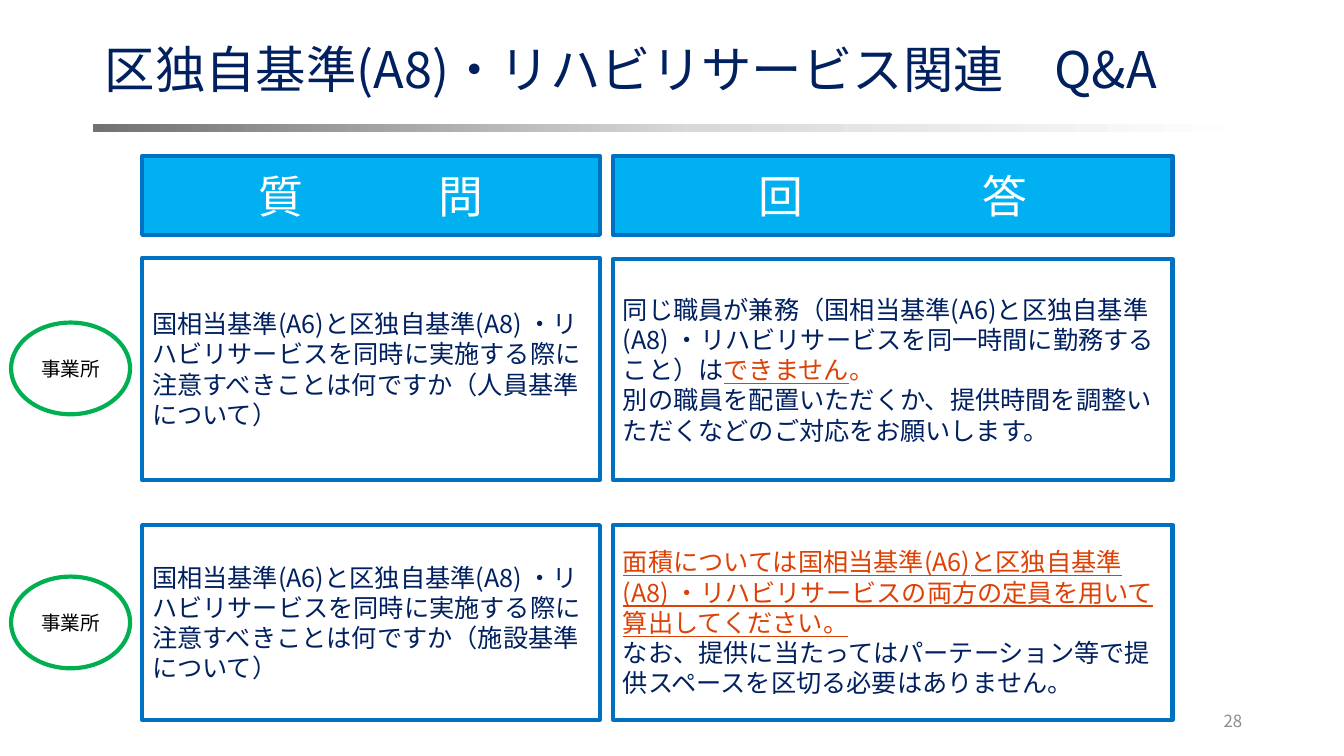
from copy import deepcopy
from dataclasses import dataclass

from lxml.etree import SubElement
from pptx import Presentation
from pptx.dml.color import RGBColor
from pptx.enum.lang import MSO_LANGUAGE_ID as Language
from pptx.enum.shapes import MSO_SHAPE as Preset
from pptx.enum.text import MSO_ANCHOR as Anchor, PP_ALIGN as Align
from pptx.oxml.ns import qn
from pptx.slide import Slide
from pptx.text.text import TextFrame
from pptx.util import Emu, Pt

PX = 9144
FONT = "Noto Sans CJK JP"
NAVY, RED, WHITE, BLACK, GREY = "002060", "DC4106", "FFFFFF", "000000", "8C8C8C"
SKY, BLUE, GREEN = "00B0F0", "0070C0", "00B050"
QUESTION_LEFT, QUESTION_WIDTH = 141, 454
ANSWER_LEFT, ANSWER_WIDTH = 608, 555


@dataclass(frozen=True)
class Part:
    """A stretch of text with its own look; gap widens each character, in points."""

    text: str
    color: str = NAVY
    underline: bool = False
    gap: int = 0


@dataclass(frozen=True)
class Box:
    """A place on the slide, in px."""

    left: int
    top: int
    width: int
    height: int

    def emu(self) -> list[Emu]:
        """Return the place in EMU."""
        return [Emu(side * PX) for side in (self.left, self.top, self.width, self.height)]


@dataclass(frozen=True)
class Style:
    """The outline, fill and text layout of a shape."""

    preset: Preset
    line: str
    fill: str | None
    size: int
    align: Align


@dataclass(frozen=True)
class Entry:
    """One question with its answer paragraphs."""

    question_top: int
    answer_top: int
    bottom: int
    badge_top: int
    topic: str
    answer: list[list[Part]]


HEADING = Style(Preset.RECTANGLE, BLUE, SKY, 32, Align.CENTER)
CARD = Style(Preset.RECTANGLE, BLUE, None, 18, Align.LEFT)
BADGE = Style(Preset.OVAL, GREEN, WHITE, 14, Align.CENTER)

HEADINGS = [
    (QUESTION_LEFT, QUESTION_WIDTH, "質", "問", 64),
    (ANSWER_LEFT, ANSWER_WIDTH, "回", "答", 96),
]

ENTRIES = [
    Entry(256, 257, 476, 320, "人員", [
        [
            Part("同じ職員が兼務（国相当基準(A6)と区独自基準(A8) ・リハビリサービスを同一時間に勤務すること）は"),
            Part("できません", RED, True),
            Part("。", RED),
        ],
        [Part("別の職員を配置いただくか、提供時間を調整いただくなどのご対応をお願いします。")],
    ]),
    Entry(521, 521, 714, 572, "施設", [
        [Part("面積については国相当基準(A6)と区独自基準(A8) ・リハビリサービスの両方の定員を用いて算出してください。", RED, True)],
        [Part("なお、提供に当たってはパーテーション等で提供スペースを区切る必要はありません。")],
    ]),
]


def rgb(color: str) -> RGBColor:
    """Turn a hex string into a colour."""
    return RGBColor.from_string(color)


def write(frame: TextFrame, paragraphs: list[list[Part]], size: int,
          align: Align, spacing: float = 1.0) -> None:
    """Fill a text frame with styled paragraphs."""
    frame.word_wrap = True
    frame.vertical_anchor = Anchor.MIDDLE
    for index, parts in enumerate(paragraphs):
        paragraph = frame.add_paragraph() if index else frame.paragraphs[0]
        paragraph.alignment = align
        paragraph.line_spacing = spacing
        for part in parts:
            run = paragraph.add_run()
            run.text = part.text
            look = {"name": FONT, "size": Pt(size), "underline": part.underline,
                    "language_id": Language.JAPANESE}
            for key, value in look.items():
                setattr(run.font, key, value)
            run.font.color.rgb = rgb(part.color)
            properties = run.font._element
            SubElement(properties, qn("a:ea"), typeface=FONT)
            if part.gap:
                properties.set("spc", str(part.gap * 100))


def add_label(slide: Slide, box: Box, part: Part, size: int,
              align: Align, spacing: float = 1.0) -> None:
    """Add a plain line of text."""
    label = slide.shapes.add_textbox(*box.emu())
    write(label.text_frame, [[part]], size, align, spacing)


def add_panel(slide: Slide, box: Box, style: Style, paragraphs: list[list[Part]]) -> None:
    """Add an outlined shape with text."""
    panel = slide.shapes.add_shape(style.preset, *box.emu())
    panel.shadow.inherit = False
    panel.line.color.rgb = rgb(style.line)
    panel.line.width = Pt(3)
    if style.fill:
        panel.fill.solid()
        panel.fill.fore_color.rgb = rgb(style.fill)
    else:
        panel.fill.background()
    write(panel.text_frame, paragraphs, style.size, style.align)


def add_rule(slide: Slide, box: Box, stops: list[tuple[float, str]]) -> None:
    """Add the fading bar below the title."""
    rule = slide.shapes.add_shape(Preset.FLOWCHART_PROCESS, *box.emu())
    rule.shadow.inherit = False
    rule.line.fill.background()
    rule.fill.gradient()
    rule.fill.gradient_angle = 0
    stop_list = rule._element.xpath(".//a:gsLst")[0]
    stop_list.append(deepcopy(stop_list[0]))
    for stop, (position, color) in zip(rule.fill.gradient_stops, stops):
        stop.position = position
        stop.color.rgb = rgb(color)


def add_entry(slide: Slide, entry: Entry) -> None:
    """Add a question, its answer and the badge of the asker."""
    question = ("国相当基準(A6)と区独自基準(A8) ・リハビリサービスを同時に実施する際に"
                f"注意すべきことは何ですか（{entry.topic}基準について）")
    columns = [
        (QUESTION_LEFT, QUESTION_WIDTH, entry.question_top, [[Part(question)]]),
        (ANSWER_LEFT, ANSWER_WIDTH, entry.answer_top, entry.answer),
    ]
    for left, width, top, paragraphs in columns:
        add_panel(slide, Box(left, top, width, entry.bottom - top), CARD, paragraphs)
    add_panel(slide, Box(11, entry.badge_top, 118, 91), BADGE, [[Part("事業所", BLACK)]])


def main() -> None:
    """Build the slide and save it."""
    deck = Presentation()
    deck.slide_width, deck.slide_height = Emu(1333 * PX), Emu(750 * PX)
    slide = deck.slides.add_slide(deck.slide_layouts[6])
    add_label(slide, Box(94, 38, 1150, 67),
              Part("区独自基準(A8)・リハビリサービス関連　Q&A"), 36, Align.LEFT, 0.9)
    add_label(slide, Box(942, 695, 300, 40), Part("28", GREY), 12, Align.RIGHT)
    add_rule(slide, Box(92, 123, 1150, 8), [(0, "767171"), (0.52, "D9D9D9"), (1, WHITE)])
    for left, width, first, last, gap in HEADINGS:
        heading = [Part(first, WHITE), Part("　", WHITE, gap=gap), Part(last, WHITE)]
        add_panel(slide, Box(left, 155, width, 78), HEADING, [heading])
    for entry in ENTRIES:
        add_entry(slide, entry)
    deck.save("out.pptx")


if __name__ == "__main__":
    main()
